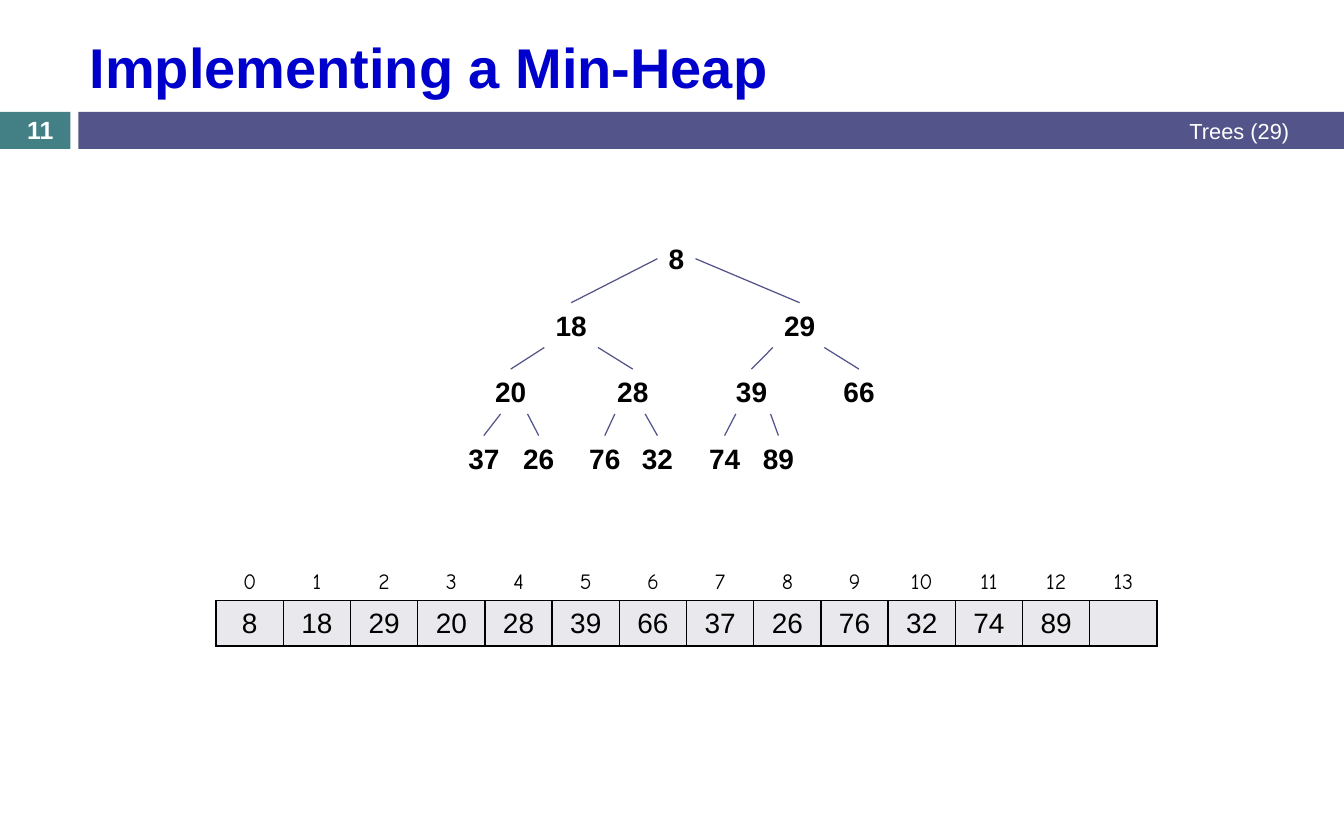
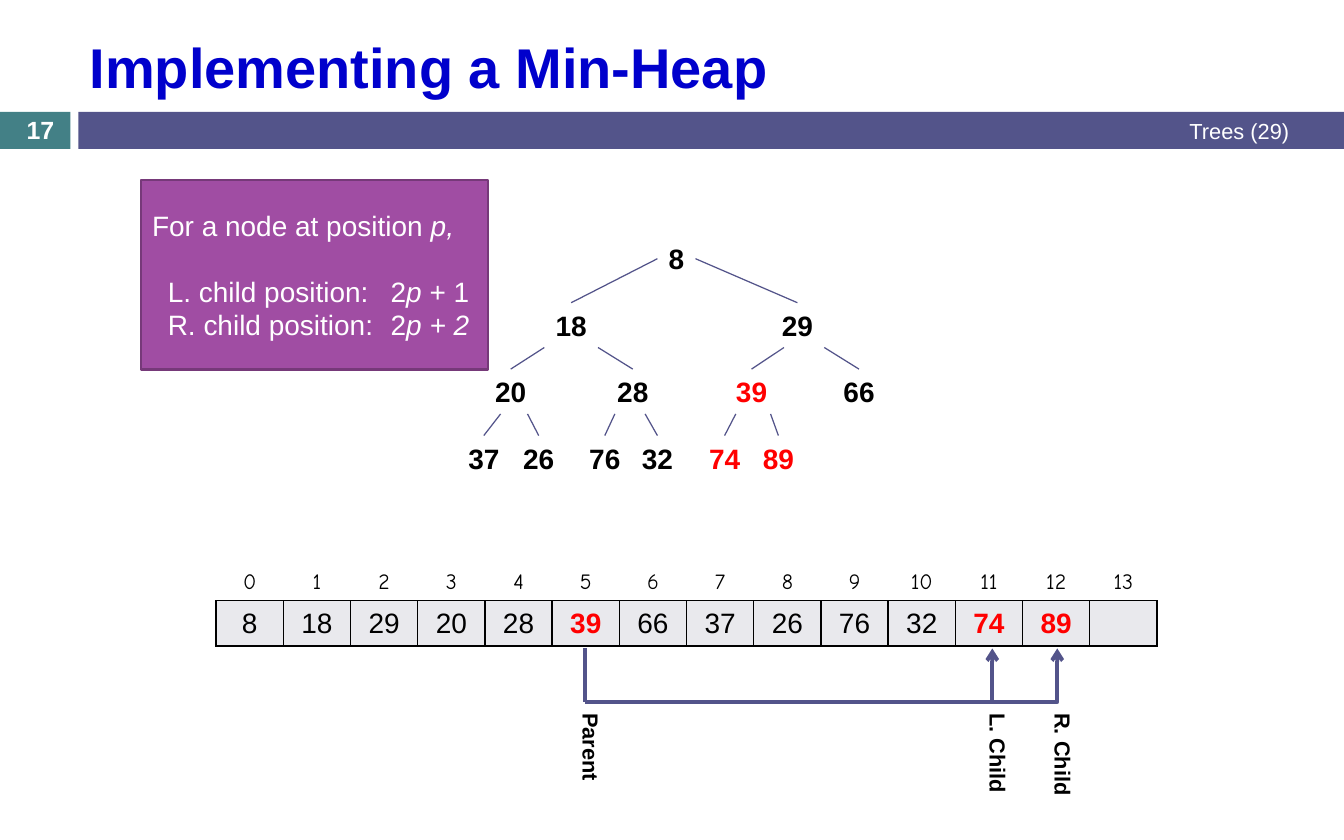
from dataclasses import dataclass, replace
from typing import Any, NamedTuple

from lxml.etree import SubElement
from pptx import Presentation
from pptx.dml.color import RGBColor
from pptx.enum.shapes import MSO_CONNECTOR as Link, MSO_SHAPE as Preset
from pptx.enum.text import MSO_ANCHOR as Anchor, MSO_AUTO_SIZE as AutoSize, PP_ALIGN as Align
from pptx.oxml.ns import qn
from pptx.slide import Slide
from pptx.util import Inches, Pt

COLORS = {
    "title": "0000CC", "band": "53548A", "number": "438086", "text": "000000",
    "paper": "FFFFFF", "cell": "E9E9ED", "mark": "FF0000",
    "note": "A04DA3", "note edge": "763979",
}
FONT, INDEX_FONT = "Arial", "Comic Neue"
WIDTH, HEIGHT = Inches(12), Inches(7.5)
UNIT = WIDTH // 120  # the grid has 120 columns and 75 rows


class Area(NamedTuple):
    """Left, top, width and height in grid columns and rows."""
    left: float
    top: float
    width: float
    height: float

    def lengths(self) -> list[int]:
        return [round(part * UNIT) for part in self]


class Style(NamedTuple):
    size: float
    color: str = "text"
    bold: bool = False
    align: Align = Align.LEFT
    font: str = FONT


@dataclass(frozen=True)
class Node:
    """Heap value, centre column, and where its branches leave from that centre."""
    value: int
    center: float
    left: float = 0
    right: float = 0


NODES = [
    Node(8, 60.4, -1.7, 1.7),
    Node(18, 51, -2.4, 2.4), Node(29, 71.4, -2.4, 2.2),
    Node(20, 45.6, -0.9, 1.5), Node(28, 56.5, -1.6, 1.1),
    Node(39, 67.1, -1.4, 1.7), Node(66, 76.7),
    Node(37, 43.2), Node(26, 48.1), Node(76, 54), Node(32, 58.7),
    Node(74, 64.7), Node(89, 69.5),
]
TREE_TOP, LEVEL_STEP = 21.1, 5.93
NODE_WIDTH, NODE_HEIGHT = 4.8, 4

ARRAY = Area(19.3, 49.6, 84, 8.1)
ARRAY_LENGTH = 14
ARRAY_BOTTOM, BUS_ROW = 57.9, 62.7

NODE_STYLE = Style(18, bold=True, align=Align.CENTER)
TITLE_STYLE = Style(36, "title", True)
COURSE_STYLE = Style(14, "paper", align=Align.RIGHT)
NUMBER_STYLE = Style(16, "paper", True, Align.CENTER)
INDEX_STYLE = Style(14, align=Align.CENTER, font=INDEX_FONT)
CELL_STYLE = Style(18, align=Align.CENTER)
NOTE_STYLE = Style(18, "paper")
POINTER_STYLE = Style(14, bold=True)


def color(name: str) -> RGBColor:
    return RGBColor.from_string(COLORS[name])


def format_paragraph(para: Any, style: Style) -> None:
    para.alignment = style.align
    para.font.size = Pt(style.size)
    para.font.name = style.font
    para.font.bold = style.bold
    para.font.color.rgb = color(style.color)


def add_label(shapes: Any, area: Area, text: str, style: Style, fitted: bool = False) -> Any:
    box = shapes.add_textbox(*area.lengths())
    frame = box.text_frame
    frame.word_wrap = not fitted
    if fitted:
        frame.auto_size = AutoSize.SHAPE_TO_FIT_TEXT
    else:
        frame.vertical_anchor = Anchor.MIDDLE
    frame.text = text
    format_paragraph(frame.paragraphs[0], style)
    return box


def add_block(shapes: Any, area: Area, fill: str, edge: str | None = None) -> Any:
    block = shapes.add_shape(Preset.RECTANGLE, *area.lengths())
    block.shadow.inherit = False
    block.fill.solid()
    block.fill.fore_color.rgb = color(fill)
    if edge:
        block.line.color.rgb = color(edge)
        block.line.width = Pt(1.5)
    else:
        block.line.fill.background()
    return block


def add_line(shapes: Any, start: tuple[float, float], end: tuple[float, float],
             weight: float = 0.79, arrow: bool = False, kind: Link = Link.STRAIGHT) -> Any:
    line = shapes.add_connector(kind, *[round(part * UNIT) for part in (*start, *end)])
    line.line.color.rgb = color("band")
    line.line.width = Pt(weight)
    properties = line._element.spPr
    if arrow:
        SubElement(properties.find(qn("a:ln")), qn("a:tailEnd"), type="arrow")
    SubElement(properties, qn("a:effectLst"))
    return line


def add_page(deck: Any, number: int) -> Slide:
    """Add a slide with the shared bands, course label, number and title."""
    page = deck.slides.add_slide(deck.slide_layouts[5])
    add_block(page.shapes, Area(0, 10, 6.3, 3.3), "number")
    add_block(page.shapes, Area(7, 10, 113, 3.3), "band")
    add_label(page.shapes, Area(45, 9.9, 71.1, 3.5), "Trees (29)", COURSE_STYLE)
    add_label(page.shapes, Area(0, 10.1, 7.2, 3), str(number), NUMBER_STYLE)
    title = page.shapes.title
    title.left, title.top, title.width, title.height = Area(7, 1.9, 109.1, 8).lengths()
    title.text_frame.text = "Implementing a Min-Heap"
    title.text_frame.vertical_anchor = Anchor.MIDDLE
    format_paragraph(title.text_frame.paragraphs[0], TITLE_STYLE)
    return page


def node_top(position: int) -> float:
    level = (position + 1).bit_length() - 1
    return TREE_TOP + level * LEVEL_STEP


def add_tree(shapes: Any, nodes: list[Node], marked: set[int]) -> None:
    for position, node in enumerate(nodes):
        top = node_top(position)
        style = NODE_STYLE._replace(color="mark" if node.value in marked else "text")
        area = Area(node.center - NODE_WIDTH / 2, top, NODE_WIDTH, NODE_HEIGHT)
        add_label(shapes, area, str(node.value), style, fitted=True)
        # The root's branches leave from its sides, the others from below
        exit_row = top + (NODE_HEIGHT if position else NODE_HEIGHT / 2)
        for child, offset in ((2 * position + 1, node.left), (2 * position + 2, node.right)):
            if child < len(nodes):
                add_line(shapes, (node.center + offset, exit_row),
                         (nodes[child].center, node_top(child)))


def set_borders(cell: Any, sides: dict[str, str]) -> None:
    properties = cell._tc.get_or_add_tcPr()
    for place, (side, name) in enumerate(sides.items()):
        border = SubElement(properties, qn(f"a:ln{side}"), w=str(Pt(1)))
        fill = SubElement(border, qn("a:solidFill"))
        SubElement(fill, qn("a:srgbClr"), val=COLORS[name])
        properties.insert(place, border)


def add_array(page: Slide, marked: set[int]) -> None:
    table = page.shapes.add_table(2, ARRAY_LENGTH, *ARRAY.lengths()).table
    table.first_row = table.horz_banding = False
    values = [node.value for node in NODES]
    for column in range(ARRAY_LENGTH):
        value = values[column] if column < len(values) else ""
        value_style = CELL_STYLE
        if value in marked:
            value_style = CELL_STYLE._replace(color="mark", bold=True)
        rows = (
            (column, INDEX_STYLE, "paper", "paper", Anchor.BOTTOM),
            (value, value_style, "cell", "text", Anchor.MIDDLE),
        )
        for row, (content, style, fill, edge, anchor) in enumerate(rows):
            cell = table.cell(row, column)
            cell.text = str(content)
            cell.vertical_anchor = anchor
            format_paragraph(cell.text_frame.paragraphs[0], style)
            cell.fill.solid()
            cell.fill.fore_color.rgb = color(fill)
            set_borders(cell, {"L": edge, "R": edge, "T": edge if row == 0 else "text",
                               "B": "text"})


def add_note(page: Slide) -> None:
    """State the child position rule, with its columns aligned on tab stops."""
    note = add_block(page.shapes, Area(12.6, 16.1, 31, 16.9), "note", "note edge")
    frame = note.text_frame
    frame.word_wrap = True
    frame.vertical_anchor = Anchor.MIDDLE
    lines = [
        [("For a node at position ", False), ("p,", True)],
        [("\tL. child position:\t2", False), ("p", True), (" + 1", False)],
        [("\tR. child position:\t2", False), ("p + 2", True)],
    ]
    for order, spans in enumerate(lines):
        para = frame.add_paragraph() if order else frame.paragraphs[0]
        tabs = SubElement(para._p.get_or_add_pPr(), qn("a:tabLst"))
        for stop in (0.14, 2.13):
            SubElement(tabs, qn("a:tab"), pos=str(Inches(stop)), algn="l")
        if order == 1:
            para.space_before = Pt(20.7)
        format_paragraph(para, NOTE_STYLE)
        for text, italic in spans:
            span = para.add_run()
            span.text = text
            span.font.italic = italic


def add_pointers(page: Slide) -> None:
    """Link the parent's cell to its two children's cells."""
    parent, left_child, right_child = 52.25, 88.6, 94.4
    elbow = add_line(page.shapes, (parent, BUS_ROW), (right_child, ARRAY_BOTTOM),
                     2.5, arrow=True, kind=Link.ELBOW)
    guides = elbow._element.spPr.find(qn("a:prstGeom")).get_or_add_avLst()
    SubElement(guides, qn("a:gd"), name="adj1", fmla="val 100000")
    add_line(page.shapes, (left_child, BUS_ROW), (left_child, ARRAY_BOTTOM), 2.5, arrow=True)
    add_line(page.shapes, (parent, ARRAY_BOTTOM), (parent, BUS_ROW), 2.5)
    for text, center, length in (("Parent", parent, 7.1), ("L. Child", left_child, 8.2),
                                 ("R. Child", right_child, 8.4)):
        box = add_label(page.shapes, Area(center - 2.2, BUS_ROW, 4.4, length),
                        text, POINTER_STYLE, fitted=True)
        box.text_frame._txBody.bodyPr.set("vert", "vert")


def main() -> None:
    deck = Presentation()
    deck.slide_width, deck.slide_height = WIDTH, HEIGHT

    # Heap and its array
    page = add_page(deck, 11)
    add_array(page, set())
    add_tree(page.shapes, NODES, set())

    # Positions of a node's children
    family = {39, 74, 89}
    page = add_page(deck, 17)
    nodes = [replace(node, center=71.2, left=-1.2, right=2.4) if node.value == 29 else node
             for node in NODES]
    add_tree(page.shapes.add_group_shape().shapes, nodes, family)
    add_pointers(page)
    add_note(page)
    add_array(page, family)

    deck.save("out.pptx")


if __name__ == "__main__":
    main()
